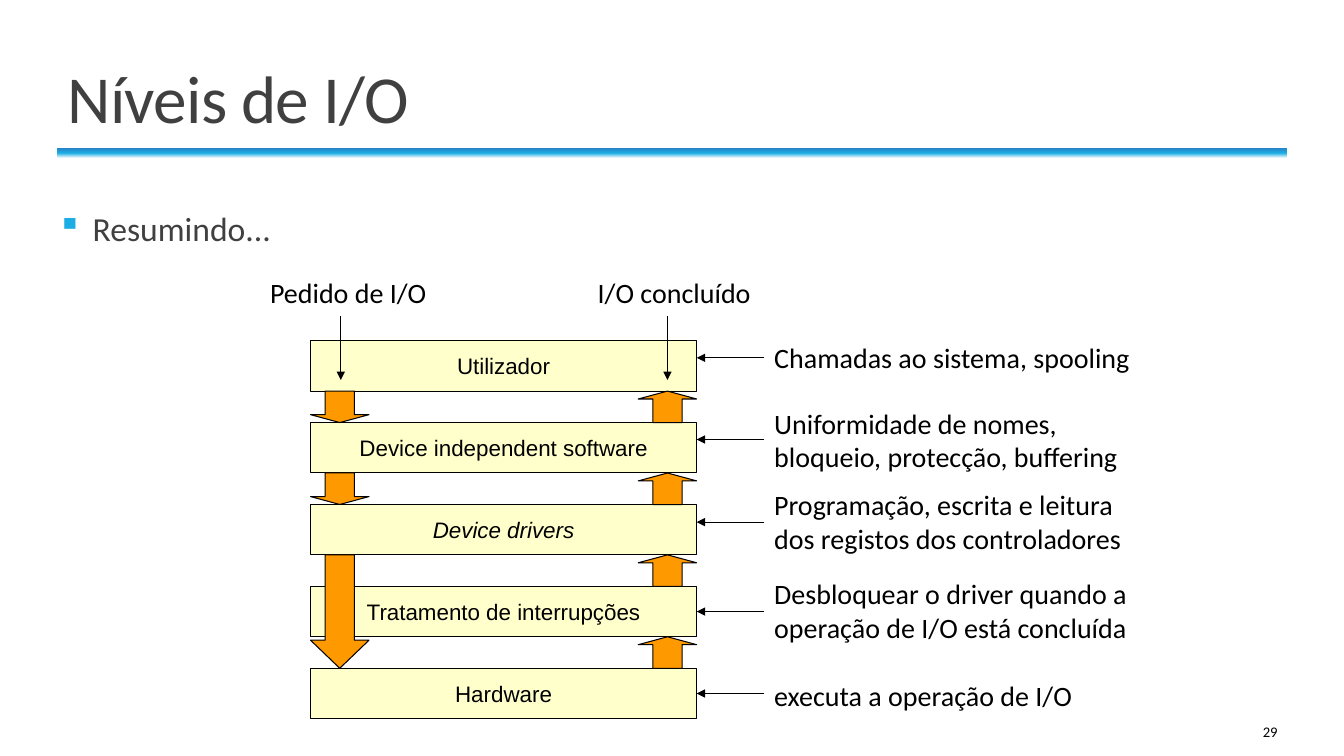
from dataclasses import dataclass

from lxml.etree import SubElement
from pptx import Presentation
from pptx.dml.color import RGBColor as Rgb
from pptx.enum.shapes import MSO_CONNECTOR as Link, MSO_SHAPE as Kind
from pptx.enum.text import MSO_ANCHOR as Anchor, PP_ALIGN as Align
from pptx.oxml.ns import qn
from pptx.shapes.autoshape import Shape
from pptx.shapes.connector import Connector
from pptx.slide import Slide
from pptx.util import Inches, Pt


@dataclass(frozen=True)
class Theme:
    """Colours, fonts and type sizes of the slide."""
    ink: str = "000000"
    gray: str = "404040"
    sky: str = "1CADE4"
    blue: str = "2683C6"
    white: str = "FFFFFF"
    cream: str = "FFFFCC"
    orange: str = "FF9900"
    sans: str = "Calibri"
    plain: str = "Arial"
    title: float = 48
    body: float = 24
    note: float = 20
    level: float = 16
    page: float = 10.5
    line: float = 0.75


@dataclass(frozen=True)
class Box:
    """A place on the slide, in inches."""
    left: float
    top: float
    width: float
    height: float


@dataclass(frozen=True)
class Level:
    """One I/O level with its note and the height of its pointer."""
    name: str
    note: str
    top: float
    tall: float
    point: float
    slant: bool = False


@dataclass(frozen=True)
class Flow:
    """A block arrow that leaves one level and spans some steps."""
    start: int
    steps: int
    up: bool
    head: float = 0.25


@dataclass(frozen=True)
class Entry:
    """A label above the stack with the arrow under it."""
    text: str
    left: float
    width: float
    axis: float


THEME = Theme()
LEFT, WIDE, TALL = 3.08, 3.83, 0.5
FIRST, LAST = 3.38, 6.63
NOTE, ARROW = 7.58, 0.58
LEVELS = [
    Level("Utilizador", "Chamadas ao sistema, spooling", 3.33, 0.43, 3.55),
    Level("Device independent software",
          "Uniformidade de nomes, bloqueio, protecção, buffering", 3.98, 0.77, 4.36),
    Level("Device drivers",
          "Programação, escrita e leitura dos registos dos controladores",
          4.79, 0.77, 5.18, True),
    Level("Tratamento de interrupções",
          "Desbloquear o driver quando a operação de I/O está concluída",
          5.67, 0.77, 6.05),
    Level("Hardware", "executa a operação de I/O", 6.68, 0.44, 6.9),
]
STEP = (LAST - FIRST) / (len(LEVELS) - 1)
FLOWS = [Flow(0, 1, False), Flow(1, 1, False), Flow(2, 2, False, 0.48)]
FLOWS += [Flow(i, 1, True) for i in range(len(LEVELS) - 1)]
ENTRIES = [Entry("Pedido de I/O", 2.58, 1.77, 3.38),
           Entry("I/O concluído", 5.83, 1.73, 6.62)]


def write(shape: Shape, text: str, size: float, color: str = THEME.ink,
          font: str = THEME.sans, align: Align = Align.LEFT,
          anchor: Anchor = Anchor.TOP, wrap: bool = True) -> None:
    """Write one styled run into a shape."""
    frame = shape.text_frame
    frame.word_wrap = wrap
    frame.vertical_anchor = anchor
    para = frame.paragraphs[0]
    para.alignment = align
    run = para.add_run()
    run.text = text
    run.font.size = Pt(size)
    run.font.name = font
    run.font.color.rgb = Rgb.from_string(color)


def label(slide: Slide, box: Box) -> Shape:
    """Add an empty text box."""
    return slide.shapes.add_textbox(Inches(box.left), Inches(box.top),
                                    Inches(box.width), Inches(box.height))


def block(slide: Slide, kind: Kind, box: Box, fill: str) -> Shape:
    """Add a filled shape with a thin outline."""
    shape = slide.shapes.add_shape(kind, Inches(box.left), Inches(box.top),
                                   Inches(box.width), Inches(box.height))
    shape.shadow.inherit = False
    shape.fill.solid()
    shape.fill.fore_color.rgb = Rgb.from_string(fill)
    shape.line.color.rgb = Rgb.from_string(THEME.ink)
    shape.line.width = Pt(THEME.line)
    return shape


def arrow(slide: Slide, x1: float, y1: float, x2: float, y2: float) -> Connector:
    """Add a thin straight arrow."""
    link = slide.shapes.add_connector(Link.STRAIGHT, Inches(x1), Inches(y1),
                                      Inches(x2), Inches(y2))
    link.line.color.rgb = Rgb.from_string(THEME.ink)
    link.line.width = Pt(THEME.line)
    SubElement(link.line._get_or_add_ln(), qn("a:tailEnd"), type="triangle")
    SubElement(link._element.spPr, qn("a:effectLst"))
    return link


def rule(slide: Slide) -> None:
    """Draw the gradient bar under the title."""
    bar = block(slide, Kind.RECTANGLE, Box(0.57, 1.47, 12.2, 0.1), THEME.sky)
    bar.line.fill.background()
    bar.fill.gradient()
    bar.fill.gradient_angle = 90
    stops = bar._element.spPr.find(".//" + qn("a:gsLst"))
    stops.clear()
    for pos, color in ((0, THEME.white), (50, THEME.sky), (100, THEME.blue)):
        stop = SubElement(stops, qn("a:gs"), pos=str(pos * 1000))
        SubElement(stop, qn("a:srgbClr"), val=color)


def header(slide: Slide) -> None:
    """Add the title, the bullet and the page number."""
    title = label(slide, Box(0.57, 0.29, 12.2, 1.12))
    write(title, "Níveis de I/O", THEME.title, THEME.gray, anchor=Anchor.BOTTOM)
    para = title.text_frame.paragraphs[0]
    para.line_spacing = 0.85
    para.runs[0].font._element.set("spc", "-50")
    body = label(slide, Box(0.57, 2.01, 12.2, 4.82))
    body.text_frame.margin_left = body.text_frame.margin_right = 0
    write(body, "Resumindo...", THEME.body, THEME.gray)
    props = body.text_frame.paragraphs[0]._p.get_or_add_pPr()
    props.set("marL", str(Inches(0.35)))
    props.set("indent", str(Inches(-0.35)))
    tint = SubElement(props, qn("a:buClr"))
    SubElement(tint, qn("a:srgbClr"), val=THEME.sky)
    SubElement(props, qn("a:buChar"), char="▪")
    page = label(slide, Box(10.83, 7.06, 1.94, 0.4))
    write(page, "29", THEME.page, align=Align.RIGHT, anchor=Anchor.MIDDLE)


def stack(slide: Slide) -> None:
    """Draw the levels, the block arrows and the notes."""
    bars = []
    for i, level in enumerate(LEVELS):
        bar = block(slide, Kind.RECTANGLE,
                    Box(LEFT, FIRST + i * STEP, WIDE, TALL), THEME.cream)
        write(bar, level.name, THEME.level, font=THEME.plain, align=Align.CENTER,
              anchor=Anchor.MIDDLE, wrap=False)
        bar.text_frame.paragraphs[0].runs[0].font.italic = level.slant
        bars.append(bar)
    for flow in FLOWS:
        left = LEFT + WIDE - ARROW if flow.up else LEFT
        box = Box(left, FIRST + flow.start * STEP + TALL, ARROW,
                  flow.steps * STEP - TALL)
        shape = block(slide, Kind.DOWN_ARROW, box, THEME.orange)
        shape.adjustments[1] = flow.head
        shape.rotation = 180 if flow.up else 0
    for i, level in enumerate(LEVELS):
        middle = FIRST + i * STEP + TALL / 2
        near = abs(level.point - middle) < 0.03
        y = middle if near else level.point
        link = arrow(slide, NOTE, y, LEFT + WIDE, y)
        if near:
            link.end_connect(bars[i], 3)
        note = label(slide, Box(NOTE, level.top, 3.75, level.tall))
        write(note, level.note, THEME.note)


def main() -> None:
    """Build the slide and save it."""
    deck = Presentation()
    deck.slide_width, deck.slide_height = Inches(13.33), Inches(7.5)
    slide = deck.slides.add_slide(deck.slide_layouts[6])
    rule(slide)
    header(slide)
    stack(slide)
    for entry in ENTRIES:
        arrow(slide, entry.axis, 3.14, entry.axis, 3.77)
        text = label(slide, Box(entry.left, 2.68, entry.width, 0.44))
        write(text, entry.text, THEME.note, wrap=False)
    deck.save("out.pptx")


if __name__ == "__main__":
    main()
